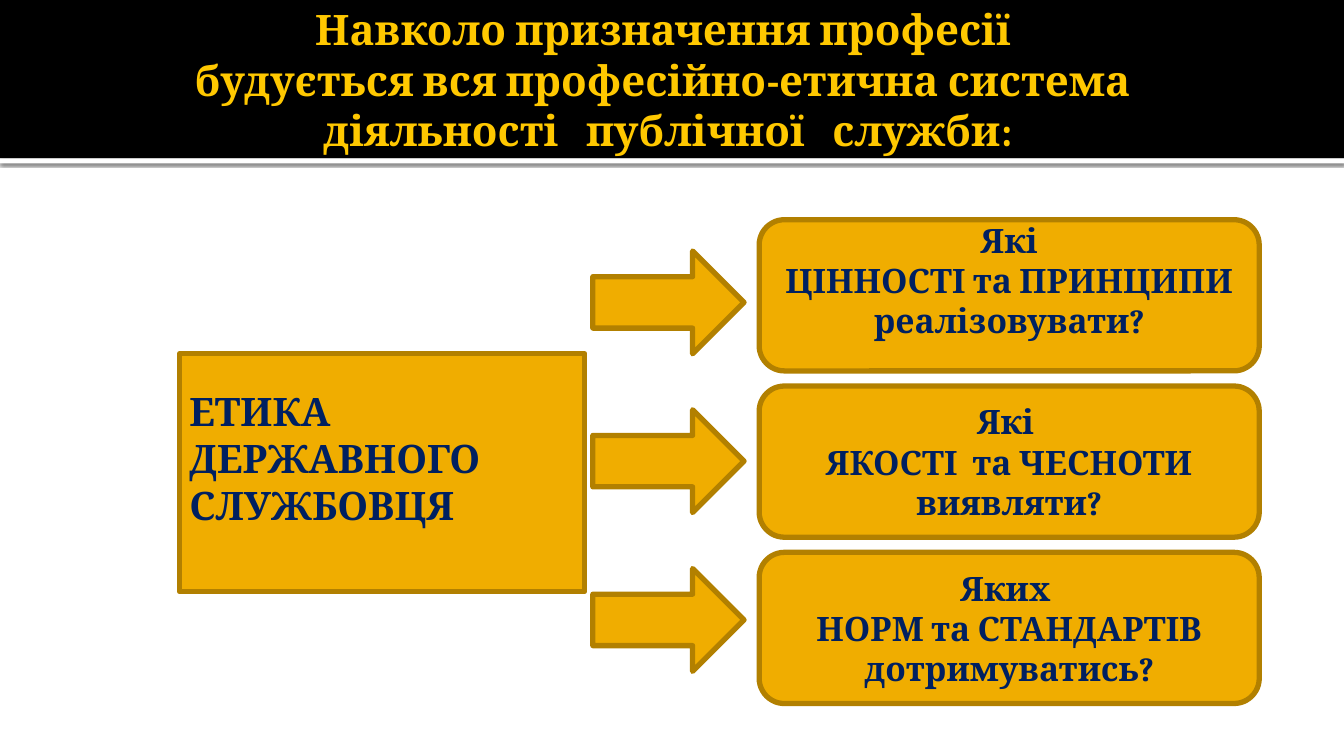
import pptx
import pptx.util
import pptx.oxml
import pptx.dml.color
import pptx.enum.shapes
import pptx.enum.text

Inches = pptx.util.Inches
Pt = pptx.util.Pt
Shapes = pptx.enum.shapes.MSO_SHAPE
Align = pptx.enum.text.PP_ALIGN
Anchor = pptx.enum.text.MSO_ANCHOR

COLORS = {
    "white": "FFFFFF",
    "black": "000000",
    "title": "FFC800",
    "gold": "F0AD00",
    "border": "B28000",
    "navy": "002060",
}
FONT = "Cambria"
SLIDE_WIDTH, SLIDE_HEIGHT = 13.33, 7.5
HEADER_HEIGHT = 1.57


def add_block(kind, left, top, width, height, fill, border=None):
    shape = slide.shapes.add_shape(
        kind, Inches(left), Inches(top), Inches(width), Inches(height))
    shape.shadow.inherit = False
    shape.fill.solid()
    shape.fill.fore_color.rgb = pptx.dml.color.RGBColor.from_string(COLORS[fill])
    if border:
        shape.line.color.rgb = pptx.dml.color.RGBColor.from_string(COLORS[border])
        shape.line.width = Pt(3.78)
    else:
        shape.line.fill.background()
    return shape


def write_text(shape, text, size, color, alignment):
    frame = shape.text_frame
    frame.text = text
    frame.word_wrap = True
    frame.vertical_anchor = Anchor.MIDDLE
    for paragraph in frame.paragraphs:
        paragraph.alignment = alignment
        for run in paragraph.runs:
            run.font.name = FONT
            run.font.size = Pt(size)
            run.font.bold = True
            run.font.color.rgb = pptx.dml.color.RGBColor.from_string(COLORS[color])
    return frame


presentation = pptx.Presentation()
presentation.slide_width = Inches(SLIDE_WIDTH)
presentation.slide_height = Inches(SLIDE_HEIGHT)
slide = presentation.slides.add_slide(presentation.slide_layouts[5])

stripe = add_block(Shapes.RECTANGLE, 0, HEADER_HEIGHT, SLIDE_WIDTH, 0.05, "white")
effects = stripe._element.spPr.find(pptx.oxml.ns.qn("a:effectLst"))
effects.append(pptx.oxml.parse_xml(
    '<a:outerShdw xmlns:a="http://schemas.openxmlformats.org/drawingml/2006/main" '
    f'blurRad="{Pt(2.5)}" dist="{Pt(0.8)}" dir="5400000" algn="tl" rotWithShape="0">'
    f'<a:srgbClr val="{COLORS["black"]}"><a:alpha val="60000"/></a:srgbClr>'
    '</a:outerShdw>'))
add_block(Shapes.RECTANGLE, 0, 0, SLIDE_WIDTH, HEADER_HEIGHT, "black")

title = slide.shapes.title
title.left, title.top = Inches(0.6), Inches(0)
title.width, title.height = Inches(12), Inches(1.58)
title_frame = write_text(
    title,
    "Навколо призначення професії \v"
    "будується вся професійно-етична система \v"
    "діяльності   публічної   служби:",
    30, "title", Align.CENTER)
title_frame.auto_size = pptx.enum.text.MSO_AUTO_SIZE.NONE
title_frame.margin_right = Inches(0.05)
slide.shapes._spTree.append(title._element)

ethics = add_block(Shapes.RECTANGLE, 1.78, 3.51, 4.02, 2.36, "gold", "border")
ethics_frame = write_text(ethics, "ЕТИКА\nДЕРЖАВНОГО СЛУЖБОВЦЯ", 28, "navy", Align.LEFT)

questions = [
    "Які\nЦІННОСТІ та ПРИНЦИПИ реалізовувати?",
    "Які \nЯКОСТІ  та ЧЕСНОТИ виявляти?",
    "Яких \nНОРМ та СТАНДАРТІВ дотримуватись?",
]
question_frames = []
for row, question in enumerate(questions):
    box = add_block(Shapes.ROUNDED_RECTANGLE,
                    7.53, 2.18 + row * 1.65, 4.96, 1.5, "gold", "border")
    question_frames.append(write_text(box, question, 24, "navy", Align.CENTER))
    add_block(Shapes.RIGHT_ARROW, 5.88, 2.49 + row * 1.575, 1.5, 1.02, "gold", "border")

for raised_frame in (ethics_frame, question_frames[0]):
    raised_frame.margin_top = Inches(0)
    raised_frame.margin_bottom = Inches(0.3)

presentation.save("out.pptx")
